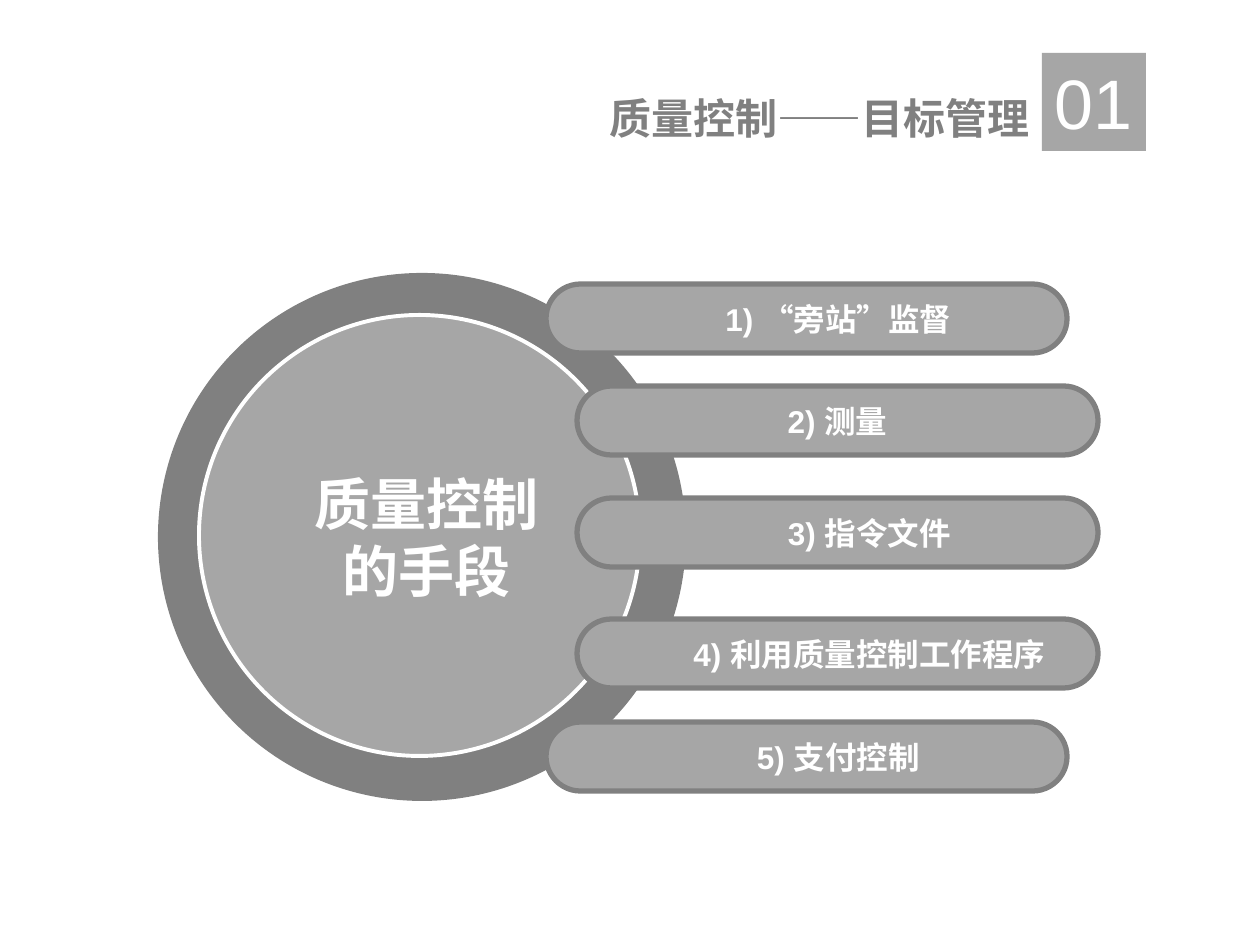
from dataclasses import dataclass

from lxml import etree
from pptx import Presentation
from pptx.dml.color import RGBColor
from pptx.enum.shapes import MSO_SHAPE
from pptx.enum.text import MSO_ANCHOR, PP_ALIGN
from pptx.oxml.ns import qn
from pptx.util import Emu, Pt

RECT, DONUT = MSO_SHAPE.RECTANGLE, MSO_SHAPE.DONUT
CIRCLE, PILL = MSO_SHAPE.OVAL, MSO_SHAPE.ROUNDED_RECTANGLE
LEFT, CENTER, RIGHT = PP_ALIGN.LEFT, PP_ALIGN.CENTER, PP_ALIGN.RIGHT
TOP, MIDDLE = MSO_ANCHOR.TOP, MSO_ANCHOR.MIDDLE

PX_PER_INCH = 126
INDENT = 63  # moves a centred pill label to the right by half of this
INSET = 13


@dataclass(frozen=True)
class Theme:
    dark: RGBColor = RGBColor(0x80, 0x80, 0x80)
    light: RGBColor = RGBColor(0xA6, 0xA6, 0xA6)
    white: RGBColor = RGBColor(0xFF, 0xFF, 0xFF)
    latin: str = "Arial"
    chinese: str = "Noto Sans CJK SC"
    number_size: int = 40
    center_size: int = 32
    heading_size: int = 24
    item_size: int = 18


THEME = Theme()

# Label, left, top and whether the label is indented
ITEMS = [
    ("1)\u00a0“旁站”监督", 546, 284, True),
    ("2) 测量", 577, 386, False),
    ("3) 指令文件", 577, 498, True),
    ("4) 利用质量控制工作程序", 577, 619, True),
    ("5) 支付控制", 546, 722, True),
]


def px(length):
    return Emu(round(length * 914400 / PX_PER_INCH))


def add_figure(slide, kind, box, fill, line=None, line_width=0):
    figure = slide.shapes.add_shape(kind, *map(px, box))
    figure.shadow.inherit = False
    figure.fill.solid()
    figure.fill.fore_color.rgb = fill
    if line is None:
        figure.line.fill.background()
    else:
        figure.line.color.rgb = line
        figure.line.width = Pt(line_width)
    return figure


def write(holder, text, size, color, align, anchor, bold=True, font=THEME.latin):
    frame = holder.text_frame
    frame.text = text
    frame.word_wrap = False
    frame.vertical_anchor = anchor
    for paragraph in frame.paragraphs:
        paragraph.alignment = align
        for run in paragraph.runs:
            run.font.size = Pt(size)
            run.font.bold = bold
            run.font.color.rgb = color
            run.font.name = font
            east_asian = etree.SubElement(run.font._element, qn("a:ea"))
            east_asian.set("typeface", THEME.chinese)
    return frame


def add_text_shadow(frame):
    for paragraph in frame.paragraphs:
        for run in paragraph.runs:
            effects = etree.Element(qn("a:effectLst"))
            shadow = etree.SubElement(effects, qn("a:outerShdw"), dist="35921",
                                      dir="2700000", algn="ctr", rotWithShape="0")
            etree.SubElement(shadow, qn("a:srgbClr"), val="000000")
            run.font._element.find(qn("a:solidFill")).addnext(effects)


def add_header(slide):
    heading = slide.shapes.add_textbox(*map(px, (544, 86, 498, 63)))
    write(heading, "质量控制——目标管理", THEME.heading_size, THEME.dark,
          RIGHT, MIDDLE, font=THEME.chinese)
    number = add_figure(slide, RECT, (1042, 53, 104, 98), THEME.light)
    write(number, "01", THEME.number_size, THEME.white, LEFT, TOP, bold=False)


def add_hub(slide):
    ring = add_figure(slide, DONUT, (158, 273, 528, 528), THEME.dark)
    ring.adjustments[0] = 0.09
    add_figure(slide, CIRCLE, (199, 315, 441, 441), THEME.light, THEME.white, 2.25)
    hub_title = slide.shapes.add_textbox(*map(px, (301, 462, 252, 149)))
    frame = write(hub_title, "质量控制\n的手段", THEME.center_size, THEME.white,
                  CENTER, MIDDLE)
    add_text_shadow(frame)


def add_item(slide, label, left, top, indented):
    pill = add_figure(slide, PILL, (left, top, 521, 69), THEME.light, THEME.dark, 3)
    pill.adjustments[0] = 0.5
    frame = write(pill, label, THEME.item_size, THEME.white, CENTER, MIDDLE)
    if indented:
        frame.margin_left = px(INSET + INDENT)


def main():
    presentation = Presentation()
    presentation.slide_width = px(1260)
    presentation.slide_height = px(945)
    slide = presentation.slides.add_slide(presentation.slide_layouts[6])

    # Heading with the section number
    add_header(slide)
    # Ring and circle with the topic
    add_hub(slide)
    # Means of quality control
    for item in ITEMS:
        add_item(slide, *item)

    presentation.save("out.pptx")


if __name__ == "__main__":
    main()
